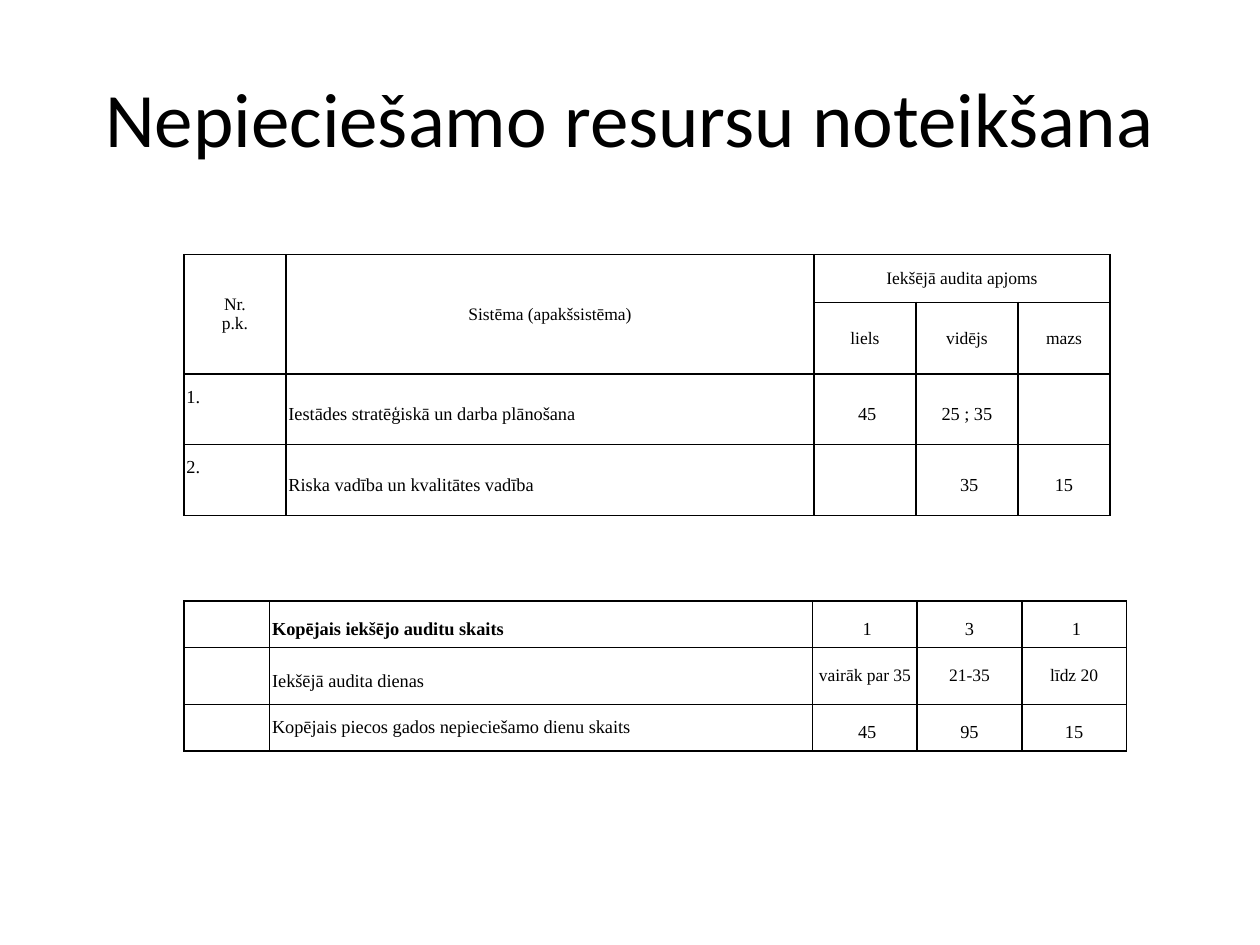
from itertools import product

from lxml import etree
from pptx import Presentation
from pptx.dml.color import RGBColor
from pptx.enum import text
from pptx.oxml.ns import qn
from pptx.util import Inches, Pt

THEME = {
    "ink": "000000", "title_font": "Calibri", "table_font": "Times New Roman",
    "title": 44, "small": 10, "body": 10.5, "line": 1, "inset": 0.02,
}
TITLE = "Nepieciešamo resursu noteikšana"

# Cells are named by (row, column); "small" cells are centred and single spaced.
TABLES = [
    {
        "at": (1.46, 2.02),
        "cols": (0.81, 4.19, 0.81, 0.81, 0.73),
        "rows": (0.38, 0.57, 0.56, 0.56),
        "cells": [
            ("Nr.\np.k.", "Sistēma (apakšsistēma)", "Iekšējā audita apjoms", "", ""),
            ("", "", "liels", "vidējs", "mazs"),
            ("1.", "Iestādes stratēģiskā un darba plānošana", " 45", "25 ; 35", ""),
            ("2.", "Riska vadība un kvalitātes vadība", "", " 35", "15"),
        ],
        "merges": [((0, 0), (1, 0)), ((0, 1), (1, 1)), ((0, 2), (0, 4))],
        "small": set(product((0, 1), range(5))),
        "top": {(2, 0), (3, 0)},
        "bold": set(),
    },
    {
        "at": (1.46, 4.77),
        "cols": (0.68, 4.31, 0.83, 0.83, 0.83),
        "rows": (0.37, 0.45, 0.37),
        "cells": [
            ("", "Kopējais iekšējo auditu skaits", " 1", "3", " 1"),
            ("", "Iekšējā audita dienas", "vairāk par 35", "21-35", "līdz 20"),
            ("", "Kopējais piecos gados nepieciešamo dienu skaits", " 45", "95", "15"),
        ],
        "merges": [],
        "small": {(1, 2), (1, 3), (1, 4)},
        "top": {(2, 1)},
        "bold": {(0, 1)},
    },
]


def write(para, words, font, size, bold=False):
    para.text = words
    for run in para.runs:
        run.font.name, run.font.size, run.font.bold = font, Pt(size), bold
        run.font.color.rgb = RGBColor.from_string(THEME["ink"])


def add_borders(cell):
    props = cell._tc.get_or_add_tcPr()
    for side in ("lnL", "lnR", "lnT", "lnB"):
        line = etree.SubElement(props, qn(f"a:{side}"), w=str(Pt(THEME["line"])))
        fill = etree.SubElement(line, qn("a:solidFill"))
        etree.SubElement(fill, qn("a:srgbClr"), val=THEME["ink"])


def style_cell(cell, words, spot, data):
    add_borders(cell)
    cell.fill.background()
    inset = Inches(THEME["inset"])
    cell.margin_left = cell.margin_right = inset
    cell.margin_top = cell.margin_bottom = inset
    anchor = text.MSO_ANCHOR
    cell.vertical_anchor = anchor.TOP if spot in data["top"] else anchor.MIDDLE
    if not words:
        return
    small = spot in data["small"]
    para = cell.text_frame.paragraphs[0]
    write(para, words, THEME["table_font"], THEME["small" if small else "body"],
          spot in data["bold"])
    centred = small or spot[1] > 1
    para.alignment = text.PP_ALIGN.CENTER if centred else text.PP_ALIGN.LEFT
    para.line_spacing = 1.0 if small else 1.5


def add_grid(slide, data):
    cols, rows = data["cols"], data["rows"]
    box = [Inches(n) for n in (*data["at"], sum(cols), sum(rows))]
    table = slide.shapes.add_table(len(rows), len(cols), *box).table
    table.first_row = table.horz_banding = False
    for col, width in zip(table.columns, cols):
        col.width = Inches(width)
    for row, height in zip(table.rows, rows):
        row.height = Inches(height)
    for r, line in enumerate(data["cells"]):
        for c, words in enumerate(line):
            style_cell(table.cell(r, c), words, (r, c), data)
    for first, last in data["merges"]:
        table.cell(*first).merge(table.cell(*last))


def add_title(slide):
    box = slide.shapes.add_textbox(*(Inches(n) for n in (0.5, 0.3, 9, 1.25)))
    frame = box.text_frame
    frame.word_wrap = True
    frame.vertical_anchor = text.MSO_ANCHOR.MIDDLE
    para = frame.paragraphs[0]
    write(para, TITLE, THEME["title_font"], THEME["title"])
    para.alignment = text.PP_ALIGN.CENTER


def main():
    deck = Presentation()
    deck.slide_width, deck.slide_height = Inches(10), Inches(7.5)
    slide = deck.slides.add_slide(deck.slide_layouts[6])
    add_title(slide)
    for data in TABLES:
        add_grid(slide, data)
    deck.save("out.pptx")


if __name__ == "__main__":
    main()
